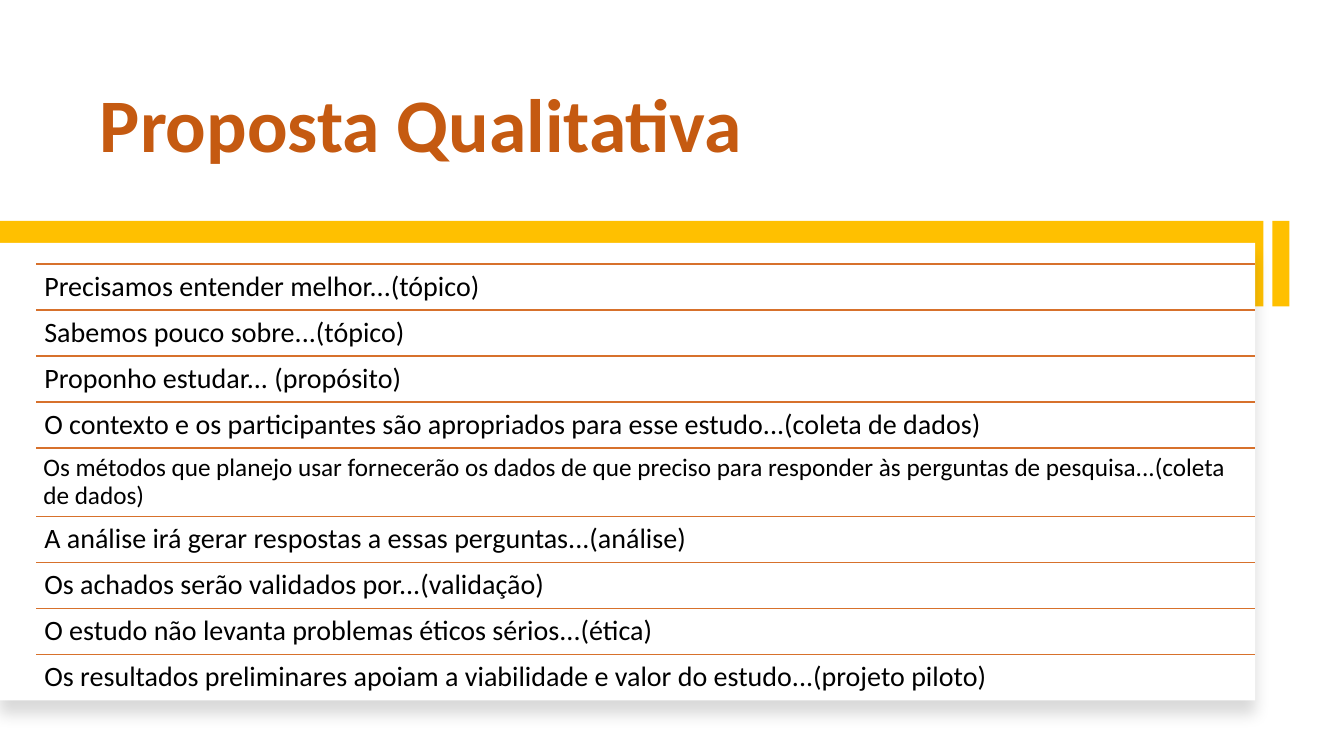
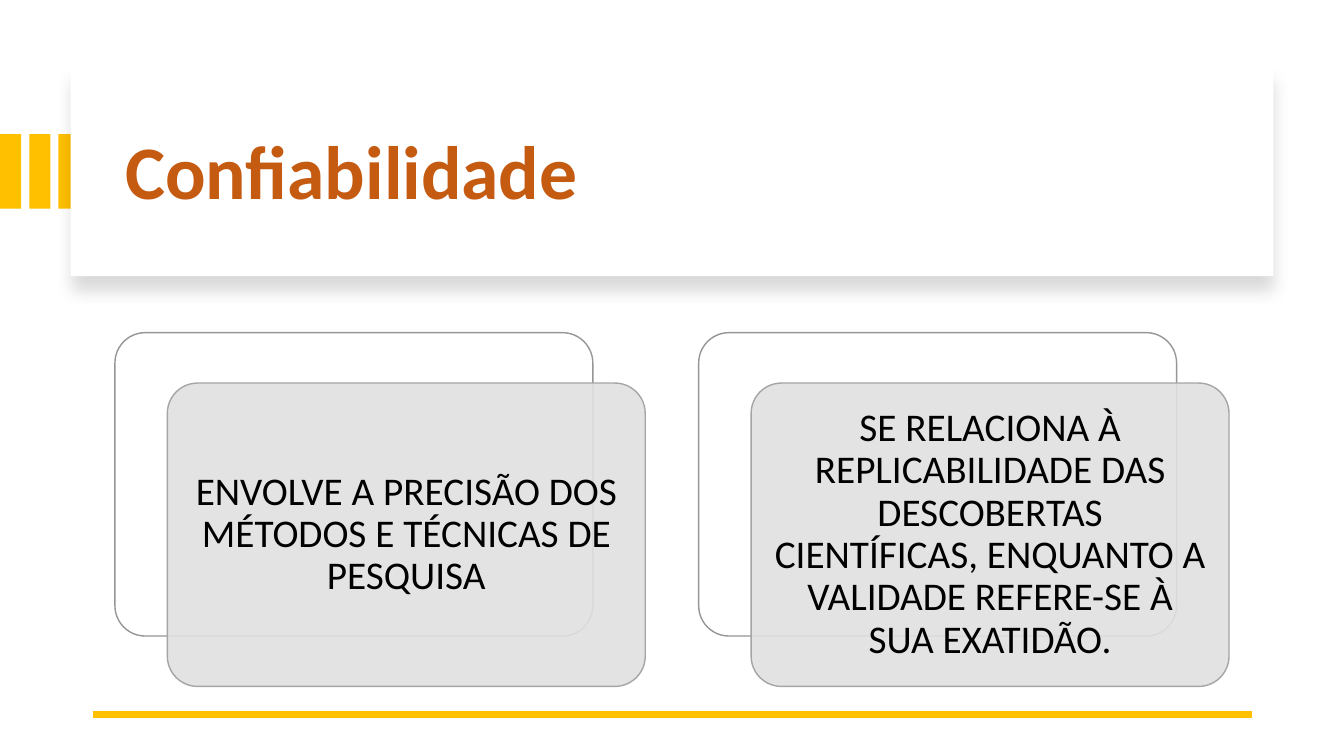
"""Build two slides on qualitative proposals and reliability."""
from dataclasses import dataclass
from typing import NamedTuple, Optional

from lxml.etree import SubElement
from pptx import Presentation
from pptx.dml.color import RGBColor
from pptx.enum.shapes import MSO_CONNECTOR as CONN, MSO_SHAPE as SHAPE
from pptx.enum.text import MSO_ANCHOR as ANCHOR, MSO_AUTO_SIZE as AUTOSIZE, PP_ALIGN as ALIGN
from pptx.oxml.ns import qn
from pptx.util import Inches, Pt


@dataclass(frozen=True)
class Theme:
    font: str = "Calibri"
    title: str = "C55A11"
    text: str = "000000"
    accent: str = "FFC000"
    panel: str = "FFFFFF"
    rule: str = "D7712C"
    card: str = "E1E1E1"
    card_line: str = "A5A5A5"
    back_line: str = "969696"
    title_size: float = 54
    card_size: float = 28
    row_size: float = 20
    small_size: float = 18
    spacing: float = 0.9


class Box(NamedTuple):
    left: float
    top: float
    width: float
    height: float

    def lengths(self) -> list:
        return [Inches(v) for v in self]


class Row(NamedTuple):
    text: str
    tall: bool = False


T = Theme()

ROWS = [
    Row("Precisamos entender melhor...(tópico)"),
    Row("Sabemos pouco sobre...(tópico)"),
    Row("Proponho estudar... (propósito)"),
    Row("O contexto e os participantes são apropriados para esse estudo...(coleta de dados)"),
    Row("Os métodos que planejo usar fornecerão os dados de que preciso para responder "
        "às perguntas de pesquisa...(coleta de dados)", tall=True),
    Row("A análise irá gerar respostas a essas perguntas...(análise)"),
    Row("Os achados serão validados por...(validação)"),
    Row("O estudo não levanta problemas éticos sérios...(ética)"),
    Row("Os resultados preliminares apoiam a viabilidade e valor do estudo...(projeto piloto)"),
]
ROWS_BOX = Box(0.36, 2.62, 12.09, 4.33)
TALL_ROW = 0.68

CARDS = [
    "ENVOLVE A PRECISÃO DOS MÉTODOS E TÉCNICAS DE PESQUISA",
    "SE RELACIONA À REPLICABILIDADE DAS DESCOBERTAS CIENTÍFICAS, "
    "ENQUANTO A VALIDADE REFERE-SE À SUA EXATIDÃO.",
]
CARD_BOX = Box(1.14, 3.3, 4.74, 3.01)
CARD_STEP = 5.79
CARD_SHIFT = (0.52, 0.5)


def add_block(s, box: Box, fill: str, line: Optional[str] = None, kind=SHAPE.RECTANGLE):
    sp = s.shapes.add_shape(kind, *box.lengths())
    sp.shadow.inherit = False
    sp.fill.solid()
    sp.fill.fore_color.rgb = RGBColor.from_string(fill)
    if line:
        sp.line.color.rgb = RGBColor.from_string(line)
        sp.line.width = Pt(1)
    else:
        sp.line.fill.background()
    return sp


def add_alpha(color, percent: int) -> None:
    SubElement(color, qn("a:alpha"), val=str(percent * 1000))


def add_panel(s, box: Box) -> None:
    sp = add_block(s, box, T.panel)
    effects = sp.element.spPr.find(qn("a:effectLst"))
    shadow = SubElement(effects, qn("a:outerShdw"), blurRad=str(Pt(11)), dist=str(Pt(10)),
                        dir="5400000", algn="t", rotWithShape="0")
    add_alpha(SubElement(shadow, qn("a:srgbClr"), val="000000"), 15)


def add_rule(s, left: float, right: float, y: float, color: str, width: float) -> None:
    rule = s.shapes.add_connector(CONN.STRAIGHT, Inches(left), Inches(y), Inches(right), Inches(y))
    rule.line.color.rgb = RGBColor.from_string(color)
    rule.line.width = Pt(width)
    SubElement(rule.element.spPr, qn("a:effectLst"))


def set_text(sp, text: str, size: float, color: str = T.text, bold: bool = False,
             inset: float = 0.1, anchor=ANCHOR.TOP, align=ALIGN.LEFT) -> None:
    tf = sp.text_frame
    tf.text = text
    tf.word_wrap = True
    tf.auto_size = AUTOSIZE.NONE
    tf.vertical_anchor = anchor
    tf.margin_left = tf.margin_right = tf.margin_top = tf.margin_bottom = Inches(inset)
    p = tf.paragraphs[0]
    p.alignment = align
    p.line_spacing = T.spacing
    p.font.name = T.font
    p.font.size = Pt(size)
    p.font.bold = bold
    p.font.color.rgb = RGBColor.from_string(color)


def add_title(s, text: str, box: Box, anchor) -> None:
    title = s.shapes.title
    title.left, title.top, title.width, title.height = box.lengths()
    set_text(title, text, T.title_size, T.title, bold=True, inset=0.05, anchor=anchor)
    title.text_frame.margin_left = title.text_frame.margin_right = Inches(0.1)
    title.element.getparent().append(title.element)


def add_rows(s, rows: list[Row], box: Box) -> None:
    tall_count = sum(row.tall for row in rows)
    normal = (box.height - tall_count * TALL_ROW) / (len(rows) - tall_count)
    y = box.top
    for row in rows:
        height = TALL_ROW if row.tall else normal
        add_rule(s, box.left, box.left + box.width, y, T.rule, 1)
        sp = s.shapes.add_textbox(*Box(box.left, y, box.width, height).lengths())
        set_text(sp, row.text, T.small_size if row.tall else T.row_size,
                 inset=0.07 if row.tall else 0.08)
        y += height


def add_card(s, text: str, box: Box) -> None:
    dx, dy = CARD_SHIFT
    front_box = box._replace(left=box.left + dx, top=box.top + dy)
    back = add_block(s, box, T.panel, T.back_line, SHAPE.ROUNDED_RECTANGLE)
    front = add_block(s, front_box, T.card, T.card_line, SHAPE.ROUNDED_RECTANGLE)
    for sp in (back, front):
        sp.adjustments[0] = 0.1
    add_alpha(front.element.spPr.find(qn("a:solidFill"))[0], 90)
    set_text(front, text, T.card_size, inset=0.12, anchor=ANCHOR.MIDDLE, align=ALIGN.CENTER)


def build_proposal(s) -> None:
    add_block(s, Box(12.62, 2.19, 0.17, 0.85), T.accent)
    add_block(s, Box(0, 2.19, 12.53, 0.85), T.accent)
    add_panel(s, Box(0, 2.41, 12.45, 4.54))
    add_title(s, "Proposta Qualitativa", Box(0.89, 0.43, 10.1, 1.3), ANCHOR.BOTTOM)
    add_rows(s, ROWS, ROWS_BOX)


def build_reliability(s) -> None:
    for i in range(3):
        add_block(s, Box(i * 0.29, 1.33, 0.21, 0.74), T.accent)
    add_panel(s, Box(0.7, 0.67, 11.93, 2.07))
    add_title(s, "Confiabilidade", Box(1.14, 0.89, 11.13, 1.7), ANCHOR.MIDDLE)
    add_rule(s, 0.92, 12.42, 7.09, T.accent, 4.5)
    for i, text in enumerate(CARDS):
        add_card(s, text, CARD_BOX._replace(left=CARD_BOX.left + i * CARD_STEP))


def main() -> None:
    prs = Presentation()
    prs.slide_width, prs.slide_height = Inches(13.33), Inches(7.5)
    title_only = prs.slide_layouts[5]
    for build in (build_proposal, build_reliability):
        build(prs.slides.add_slide(title_only))
    prs.save("out.pptx")


if __name__ == "__main__":
    main()
